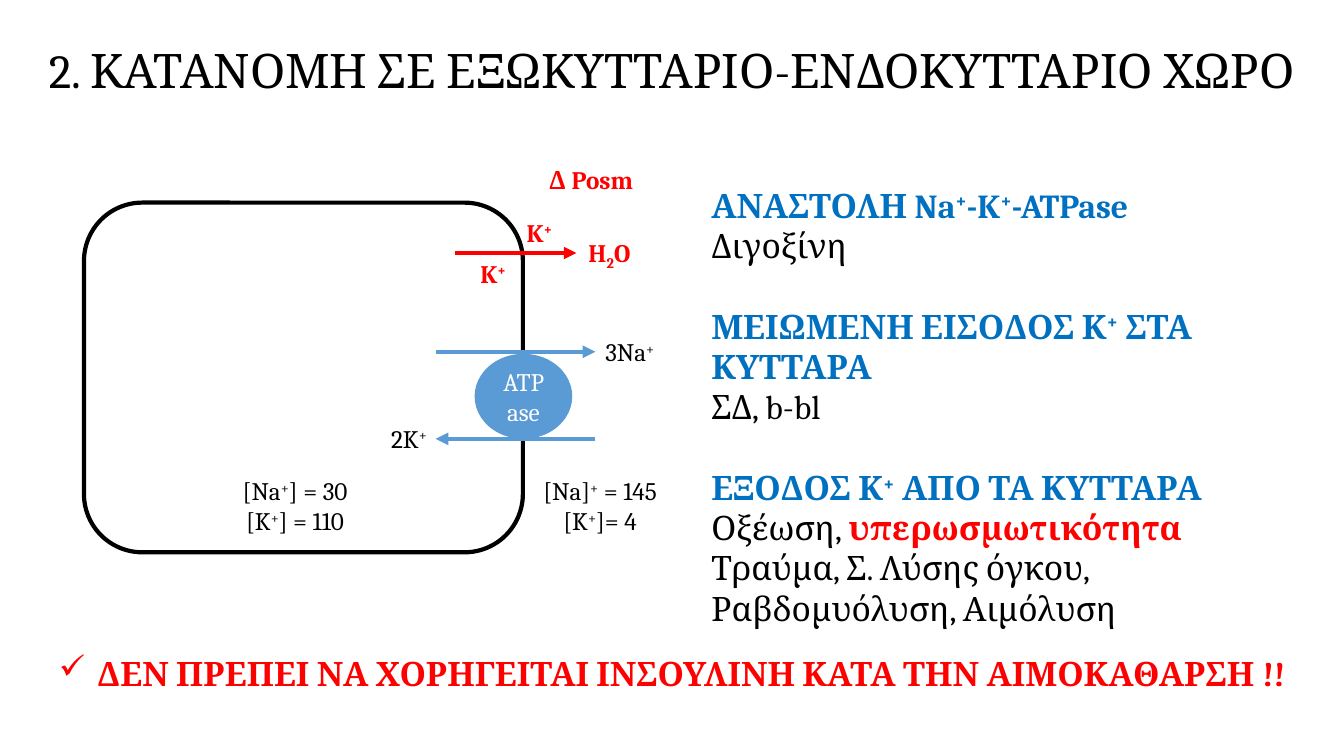
from lxml import etree
from pptx import Presentation
from pptx.dml.color import RGBColor
from pptx.enum.shapes import MSO_CONNECTOR, MSO_SHAPE
from pptx.enum.text import MSO_ANCHOR, PP_ALIGN
from pptx.oxml.ns import qn
from pptx.util import Pt

PX = 9525  # EMU per px, 96 px to the inch
CENTER, LEFT = PP_ALIGN.CENTER, PP_ALIGN.LEFT
MIDDLE = MSO_ANCHOR.MIDDLE
STRAIGHT = MSO_CONNECTOR.STRAIGHT
ROUNDED, OVAL = MSO_SHAPE.ROUNDED_RECTANGLE, MSO_SHAPE.OVAL
FONT = "Cambria"
BLACK, WHITE, RED = "000000", "FFFFFF", "FF0000"
BLUE, HEADING = "5B9BD5", "0070C0"
BASELINES = {"+": "30000", "2": "-25000"}  # superscript plus, subscript two


def add_runs(paragraph, text, size, color, bold=False):
    """Add text run by run; bars set off raised or lowered pieces."""
    for piece in text.split("|"):
        run = paragraph.add_run()
        run.text = piece
        run.font.name = FONT
        run.font.size = Pt(size)
        run.font.bold = bold
        run.font.color.rgb = RGBColor.from_string(color)
        if piece in BASELINES:
            run.font._element.set("baseline", BASELINES[piece])


def add_text(box, lines, size, align):
    """Add a text box; each line is a list of (text, color, bold)."""
    frame = slide.shapes.add_textbox(*[value * PX for value in box]).text_frame
    frame.word_wrap = True
    for index, line in enumerate(lines):
        paragraph = frame.add_paragraph() if index else frame.paragraphs[0]
        paragraph.alignment = align
        for text, color, bold in line:
            add_runs(paragraph, text, size, color, bold)
    return frame


presentation = Presentation()
presentation.slide_width = 1280 * PX
presentation.slide_height = 720 * PX
slide = presentation.slides.add_slide(presentation.slide_layouts[5])

# Title
title = slide.shapes.title
title.left, title.top, title.width, title.height = 0, 0, 1280 * PX, 139 * PX
title.text_frame.vertical_anchor = MIDDLE
title.text_frame.word_wrap = True
title_paragraph = title.text_frame.paragraphs[0]
title_paragraph.alignment = CENTER
title_paragraph.line_spacing = 0.9
add_runs(title_paragraph, "2. ΚΑΤΑΝΟΜΗ ΣΕ ΕΞΩΚΥΤΤΑΡΙΟ-ΕΝΔΟΚΥΤΤΑΡΙΟ ΧΩΡΟ", 34, BLACK)

# Cell membrane
cell = slide.shapes.add_shape(ROUNDED, 80 * PX, 193 * PX, 418 * PX, 333 * PX)
cell.shadow.inherit = False
cell.fill.background()
cell.line.color.rgb = RGBColor.from_string(BLACK)
cell.line.width = Pt(3)

# Sodium-potassium pump
pump = slide.shapes.add_shape(OVAL, 452 * PX, 337 * PX, 93 * PX, 81 * PX)
pump.shadow.inherit = False
pump.fill.solid()
pump.fill.fore_color.rgb = RGBColor.from_string(BLUE)
pump.line.fill.background()
pump.text_frame.word_wrap = True
pump.text_frame.vertical_anchor = MIDDLE
pump_paragraph = pump.text_frame.paragraphs[0]
pump_paragraph.alignment = CENTER
add_runs(pump_paragraph, "ATPase", 18, WHITE)

# Ion arrows: sodium out, potassium in, potassium leak
for start, end, y, color in [
    (415, 567, 335, BLUE),
    (567, 415, 418, BLUE),
    (433, 549, 241, RED),
]:
    arrow = slide.shapes.add_connector(STRAIGHT, start * PX, y * PX, end * PX, y * PX)
    arrow.line.color.rgb = RGBColor.from_string(color)
    arrow.line.width = Pt(3)
    properties = arrow._element.spPr
    etree.SubElement(properties.find(qn("a:ln")), qn("a:tailEnd"), type="triangle")
    etree.SubElement(properties, qn("a:effectLst"))

# Diagram labels
for box, lines, color, align in [
    ((567, 316, 89, 38), ["3Na|+"], BLACK, LEFT),
    ((363, 398, 64, 38), ["2K|+"], BLACK, LEFT),
    ((498, 448, 147, 68), ["[Na]|+| = 145", "[K|+|]= 4"], BLACK, CENTER),
    ((215, 448, 132, 68), ["[Na|+|] = 30", "[K|+|] = 110"], BLACK, CENTER),
    ((448, 241, 64, 38), ["K|+"], RED, LEFT),
    ((513, 152, 125, 38), ["Δ Posm"], RED, LEFT),
    ((492, 202, 64, 38), ["K|+"], RED, LEFT),
    ((551, 221, 82, 38), ["H|2|O"], RED, LEFT),
]:
    add_text(box, [[(line, color, color == RED)] for line in lines], 18, align)

# Causes, each heading after the first set off by one line of space
causes = [
    [("ΑΝΑΣΤΟΛΗ Na|+|-K|+|-ATPase", HEADING, True)],
    [("Διγοξίνη", BLACK, False)],
    [("ΜΕΙΩΜΕΝΗ ΕΙΣΟΔΟΣ Κ|+| ΣΤΑ ΚΥΤΤΑΡΑ", HEADING, True)],
    [("ΣΔ, b-bl", BLACK, False)],
    [("ΕΞΟΔΟΣ Κ|+| ΑΠΟ ΤΑ ΚΥΤΤΑΡΑ", HEADING, True)],
    [("Οξέωση, ", BLACK, False), ("υπερωσμωτικότητα", RED, True)],
    [("Τραύμα, Σ. Λύσης όγκου,", BLACK, False)],
    [("Ραβδομυόλυση, Αιμόλυση", BLACK, False)],
]
causes_frame = add_text((668, 171, 585, 436), causes, 24, LEFT)
for index in (2, 4):
    causes_frame.paragraphs[index].space_before = Pt(28.8)

# Warning with a check mark bullet
warning = "ΔΕΝ ΠΡΕΠΕΙ ΝΑ ΧΟΡΗΓΕΙΤΑΙ ΙΝΣΟΥΛΙΝΗ ΚΑΤΑ ΤΗΝ ΑΙΜΟΚΑΘΑΡΣΗ !!"
warning_frame = add_text((0, 617, 1280, 48), [[(warning, RED, True)]], 24, CENTER)
bullet_properties = warning_frame.paragraphs[0]._p.get_or_add_pPr()
bullet_properties.set("marL", str(36 * PX))
bullet_properties.set("indent", str(-36 * PX))
etree.SubElement(bullet_properties, qn("a:buChar"), char="✓")

presentation.save("out.pptx")
